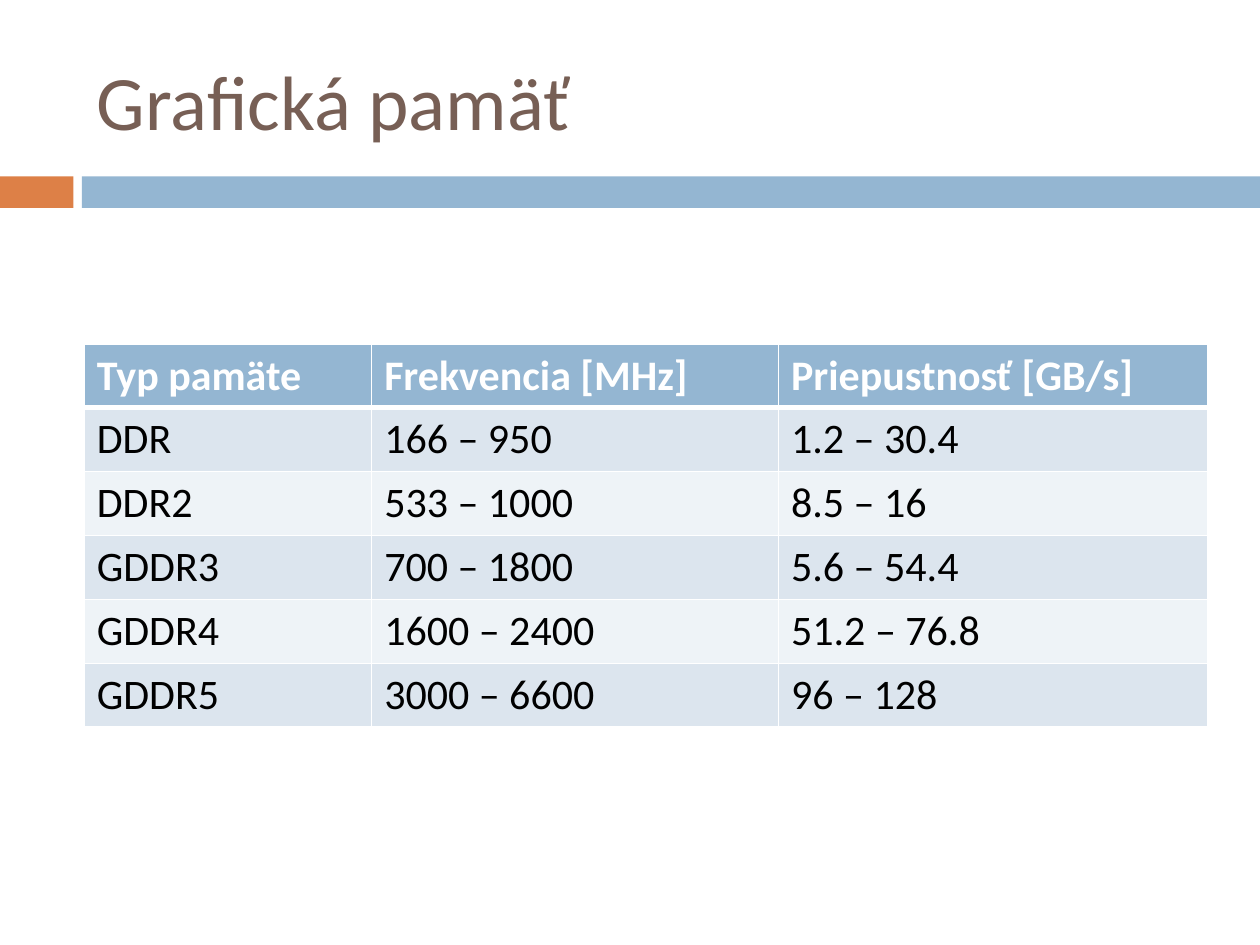
import pptx
import pptx.util
import pptx.dml.color
import pptx.enum.shapes
import pptx.enum.text
import lxml.etree
from pptx.oxml.ns import qn

Pt = pptx.util.Pt
RGB = pptx.dml.color.RGBColor.from_string
MID = pptx.enum.text.MSO_ANCHOR.MIDDLE
LEFT = pptx.enum.text.PP_ALIGN.LEFT
RECT = pptx.enum.shapes.MSO_SHAPE.RECTANGLE

# Content
TITLE = "Grafická pamäť"
ROWS = [
    ("Typ pamäte", "Frekvencia [MHz]", "Priepustnosť [GB/s]"),
    ("DDR", "166 – 950", "1.2 – 30.4"),
    ("DDR2", "533 – 1000", "8.5 – 16"),
    ("GDDR3", "700 – 1800", "5.6 – 54.4"),
    ("GDDR4", "1600 – 2400", "51.2 – 76.8"),
    ("GDDR5", "3000 – 6600", "96 – 128"),
]

# Theme and measures, in points
THEME = {
    "font": "Calibri", "title": 44, "body": 24,
    "brown": "775F55", "orange": "DD8047", "blue": "94B6D2",
    "bands": ("DCE5EE", "EEF3F7"), "white": "FFFFFF", "black": "000000",
}
WIDE, HIGH = 720, 540
EDGE = 48.2
COLS = (164.2, 232.5, 245.5)
ROW = 36
BAR = {"top": 100.8, "high": 18, "split": 42, "gap": 4.8}


def style(para, size, color, bold=False):
    para.alignment = LEFT
    look = {"name": THEME["font"], "size": Pt(size), "bold": bold}
    for run in para.runs:
        for key, val in look.items():
            setattr(run.font, key, val)
        run.font.color.rgb = RGB(color)


def paint(part, color):
    part.fill.solid()
    part.fill.fore_color.rgb = RGB(color)


def border(cell, sides):
    props = cell._tc.get_or_add_tcPr()
    for side, width in sides.items():
        line = lxml.etree.SubElement(props, qn("a:ln" + side), w=str(Pt(width)))
        fill = lxml.etree.SubElement(line, qn("a:solidFill"))
        lxml.etree.SubElement(fill, qn("a:srgbClr"), val=THEME["white"])


def main():
    deck = pptx.Presentation()
    deck.slide_width, deck.slide_height = Pt(WIDE), Pt(HIGH)
    slide = deck.slides.add_slide(deck.slide_layouts[5])

    # Two-colour bar below the title
    start = BAR["split"] + BAR["gap"]
    for left, width, color in ((0, BAR["split"], "orange"),
                               (start, WIDE - start, "blue")):
        bar = slide.shapes.add_shape(RECT, Pt(left), Pt(BAR["top"]),
                                     Pt(width), Pt(BAR["high"]))
        bar.shadow.inherit = False
        bar.line.fill.background()
        paint(bar, THEME[color])

    # Title
    head = slide.shapes.title
    place = {"left": EDGE, "top": 18, "width": sum(COLS), "height": 78}
    for key, val in place.items():
        setattr(head, key, Pt(val))
    head.text_frame.text = TITLE
    head.text_frame.vertical_anchor = MID
    style(head.text_frame.paragraphs[0], THEME["title"], THEME["brown"])

    # Memory table
    grid = slide.shapes.add_table(
        len(ROWS), len(COLS), Pt(EDGE), Pt(196.5),
        Pt(sum(COLS)), Pt(ROW * len(ROWS))).table
    for col, width in zip(grid.columns, COLS):
        col.width = Pt(width)
    for r, row in enumerate(ROWS):
        top = r == 0
        color = THEME["white"] if top else THEME["black"]
        fill = THEME["blue"] if top else THEME["bands"][(r - 1) % 2]
        sides = {"L": 1, "R": 1, "T": 3 if r == 1 else 1, "B": 3 if top else 1}
        for c, text in enumerate(row):
            cell = grid.cell(r, c)
            cell.text = text
            cell.vertical_anchor = MID
            style(cell.text_frame.paragraphs[0], THEME["body"], color, top)
            border(cell, sides)
            paint(cell, fill)

    deck.save("out.pptx")


if __name__ == "__main__":
    main()
